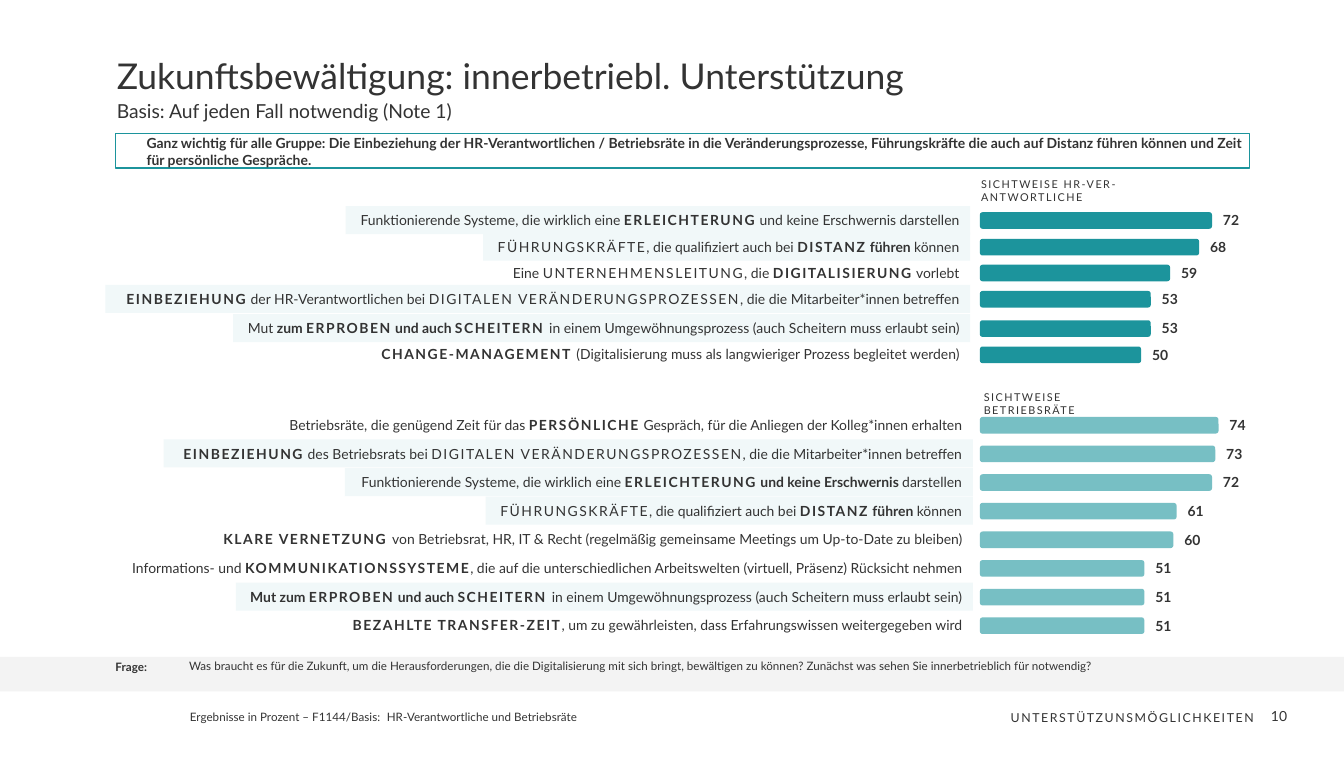
from pptx import Presentation
from pptx.dml.color import RGBColor as RGB
from pptx.enum.shapes import MSO_SHAPE as Shape
from pptx.enum.text import MSO_ANCHOR as Anchor, MSO_AUTO_SIZE as Auto, PP_ALIGN as Align
from pptx.util import Cm, Pt

COLORS = {"text": "333333", "hr": "1C949C", "council": "77BFC4",
          "tint": "F1F8F9", "band": "F3F3F3"}
PAD = (0.25, 0.13, 0.25, 0.13)
FLUSH = (0, 0, 0, 0)
INTRO = (0, 0, 0.25, 0.13)
BAR_LEFT = 22.39
CM_PER_100 = 7.37

SYSTEMS = "Funktionierende Systeme, die wirklich eine "
PROCESSES = [("DIGITALEN VERÄNDERUNGSPROZESSEN", "s"),
             (", die die Mitarbeiter*innen betreffen", "")]
LEADERS = [("FÜHRUNGSKRÄFTE", "s"), (", die qualifiziert auch bei ", ""),
           ("DISTANZ", "bs"), (" führen ", "b"), ("können", "")]
TRIAL = [("ERPROBEN", "bs"), (" und auch ", "b"), ("SCHEITERN ", "bs"),
         ("in einem Umgewöhnungsprozess (auch Scheitern muss erlaubt sein)", "")]

HR_TOPS = [4.85, 5.46, 6.05, 6.65, 7.32, 7.92]
HR_ROWS = [
    (72, 14.27, True, [(SYSTEMS, ""), ("ERLEICHTERUNG", "bs"),
                       (" und keine Erschwernis darstellen", "")]),
    (68, 11.13, True, LEADERS),
    (59, 10.8, False, [("Eine ", ""), ("UNTERNEHMENSLEITUNG", "s"), (", die ", ""),
                       ("DIGITALISIERUNG", "bs"), (" vorlebt", "")]),
    (53, 19.76, True, [("EINBEZIEHUNG", "bs"),
                       (" der HR-Verantwortlichen bei ", "")] + PROCESSES),
    (53, 16.84, True, [("Mut ", ""), ("zum ", "b")] + TRIAL),
    (50, 13.97, False, [("CHANGE-MANAGEMENT ", "bs"),
                        ("(Digitalisierung muss als langwieriger Prozess begleitet werden)", "")]),
]
COUNCIL_ROWS = [
    (74, 15.95, False, [("Betriebsräte, die genügend Zeit für das ", ""), ("PERSÖNLICHE", "bs"),
                        (" Gespräch, für die Anliegen der Kolleg*innen erhalten", "")]),
    (73, 18.49, True, [("EINBEZIEHUNG", "bs"), (" des Betriebsrats bei ", "")] + PROCESSES),
    (72, 14.35, True, [(SYSTEMS, ""), ("ERLEICHTERUNG", "bs"),
                       (" und keine Erschwernis", "b"), (" darstellen", "")]),
    (61, 11.13, True, LEADERS),
    (60, 17.45, False, [("KLARE VERNETZUNG ", "bs"),
                        ("von Betriebsrat, HR, IT & Recht (regelmäßig gemeinsame Meetings "
                         "um Up-to-Date zu bleiben)", "")]),
    (51, 19.66, False, [("Informations- und ", ""), ("KOMMUNIKATIONSSYSTEME", "bs"),
                        (", die auf die unterschiedlichen Arbeitswelten "
                         "(virtuell, Präsenz) Rücksicht nehmen", "")]),
    (51, 16.84, True, [("Mut zum ", "b")] + TRIAL),
    (51, 14.63, False, [("BEZAHLTE TRANSFER-ZEIT", "bs"),
                        (", um zu gewährleisten, dass Erfahrungswissen weitergegeben wird", "")]),
]
COUNCIL_TOPS = [9.53 + i * 4.58 / 7 for i in range(len(COUNCIL_ROWS))]


class Deck:
    font = "Lato"

    def __init__(self, s):
        self.s = s

    def fill_text(self, sp, paragraphs, size, align=Align.LEFT, anchor=Anchor.TOP,
                  pad=PAD, spacing=None):
        tf = sp.text_frame
        tf.auto_size = Auto.NONE
        tf.word_wrap = True
        tf.vertical_anchor = anchor
        tf.margin_left, tf.margin_top, tf.margin_right, tf.margin_bottom = map(Cm, pad)
        for i, runs in enumerate(paragraphs):
            p = tf.add_paragraph() if i else tf.paragraphs[0]
            p.alignment = align
            if spacing:
                p.line_spacing = spacing
            for text, style in runs:
                r = p.add_run()
                r.text = text
                r.font.name = self.font
                r.font.size = Pt(size)
                r.font.bold = "b" in style
                r.font.color.rgb = RGB.from_string(COLORS["text"])
                if "s" in style:
                    r._r.get_or_add_rPr().set("spc", "100")

    def title(self, box, text, size, **style):
        sp = self.s.shapes.title
        sp.left, sp.top, sp.width, sp.height = map(Cm, box)
        self.fill_text(sp, [[(text, "")]], size, **style)

    def text(self, box, paragraphs, size, **style):
        self.fill_text(self.s.shapes.add_textbox(*map(Cm, box)), paragraphs, size, **style)

    def shape(self, box, fill=None, line=None, kind=Shape.RECTANGLE):
        sp = self.s.shapes.add_shape(kind, *map(Cm, box))
        sp.shadow.inherit = False
        if fill:
            sp.fill.solid()
            sp.fill.fore_color.rgb = RGB.from_string(COLORS[fill])
        else:
            sp.fill.background()
        if line:
            sp.line.color.rgb = RGB.from_string(COLORS[line])
            sp.line.width = Pt(0.75)
        else:
            sp.line.fill.background()
        return sp

    def row(self, top, right, color, value, width, tinted, runs):
        label = (right - width, top - 0.14, width, 0.64)
        style = dict(align=Align.RIGHT, anchor=Anchor.MIDDLE)
        if tinted:
            self.fill_text(self.shape(label, "tint"), [runs], 9, **style)
        else:
            self.text(label, [runs], 9, **style)
        length = value * CM_PER_100 / 100
        self.shape((BAR_LEFT, top, length, 0.38), color, kind=Shape.ROUNDED_RECTANGLE)
        self.text((BAR_LEFT + length, top - 0.17, 0.94, 0.71), [[(str(value), "b")]], 9,
                  anchor=Anchor.MIDDLE)

    def group(self, heading_top, heading, right, color, tops, rows):
        self.text((right, heading_top, 5, 0.86), [[(line, "s")] for line in heading], 7)
        for top, row in zip(tops, rows):
            self.row(top, right, color, *row)


def main():
    prs = Presentation()
    prs.slide_width, prs.slide_height = Cm(30.71), Cm(17.3)
    deck = Deck(prs.slides.add_slide(prs.slide_layouts[5]))

    deck.title((2.67, 1.32, 22.53, 1.02), "Zukunftsbewältigung: innerbetriebl. Unterstützung",
               23, pad=INTRO, spacing=Pt(25.3))
    deck.text((2.67, 2.26, 21.41, 0.61), [[("Basis: Auf jeden Fall notwendig (Note 1)", "")]],
              12.5, pad=INTRO, spacing=Pt(15))
    deck.shape((2.64, 3.05, 25.91, 0.79), line="hr")
    deck.text((3.35, 3.07, 25.2, 0.79),
              [[("Ganz wichtig für alle Gruppe: Die Einbeziehung der HR-Verantwortlichen / "
                 "Betriebsräte in die Veränderungsprozesse, Führungskräfte die auch auf Distanz "
                 "führen können und Zeit für persönliche Gespräche.", "b")]],
              9, anchor=Anchor.MIDDLE, pad=FLUSH)

    deck.group(3.94, ["SICHTWEISE HR-VER-", "ANTWORTLICHE"], 22.17, "hr", HR_TOPS, HR_ROWS)
    deck.group(8.81, ["SICHTWEISE", "BETRIEBSRÄTE"], 22.23, "council", COUNCIL_TOPS, COUNCIL_ROWS)

    deck.shape((0, 15.01, 30.71, 0.79), "band")
    deck.text((2.64, 15.09, 1.3, 0.46), [[("Frage:", "b")]], 7.5, pad=INTRO)
    deck.text((4.32, 15.06, 24.23, 0.71),
              [[("Was braucht es für die Zukunft, um die Herausforderungen, die die Digitalisierung "
                 "mit sich bringt, bewältigen zu können? Zunächst was sehen Sie innerbetrieblich "
                 "für notwendig?", "")]], 7.5, pad=INTRO)
    for left, width, text in [(4.34, 4.48, "Ergebnisse in Prozent – F1144/Basis:"),
                              (8.84, 10, "HR-Verantwortliche und Betriebsräte")]:
        deck.text((left, 16.1, width, 0.58), [[(text, "")]], 7.5,
                  anchor=Anchor.MIDDLE, pad=FLUSH)
    deck.text((22.66, 16.13, 6.25, 0.58), [[("UNTERSTÜTZUNSMÖGLICHKEITEN", "s")]], 8,
              align=Align.RIGHT, spacing=0.9)
    deck.text((28.52, 16.05, 0.89, 0.51), [[("10", "")]], 9,
              align=Align.RIGHT, pad=(0.25, 0.13, 0, 0))
    prs.save("out.pptx")


if __name__ == "__main__":
    main()
